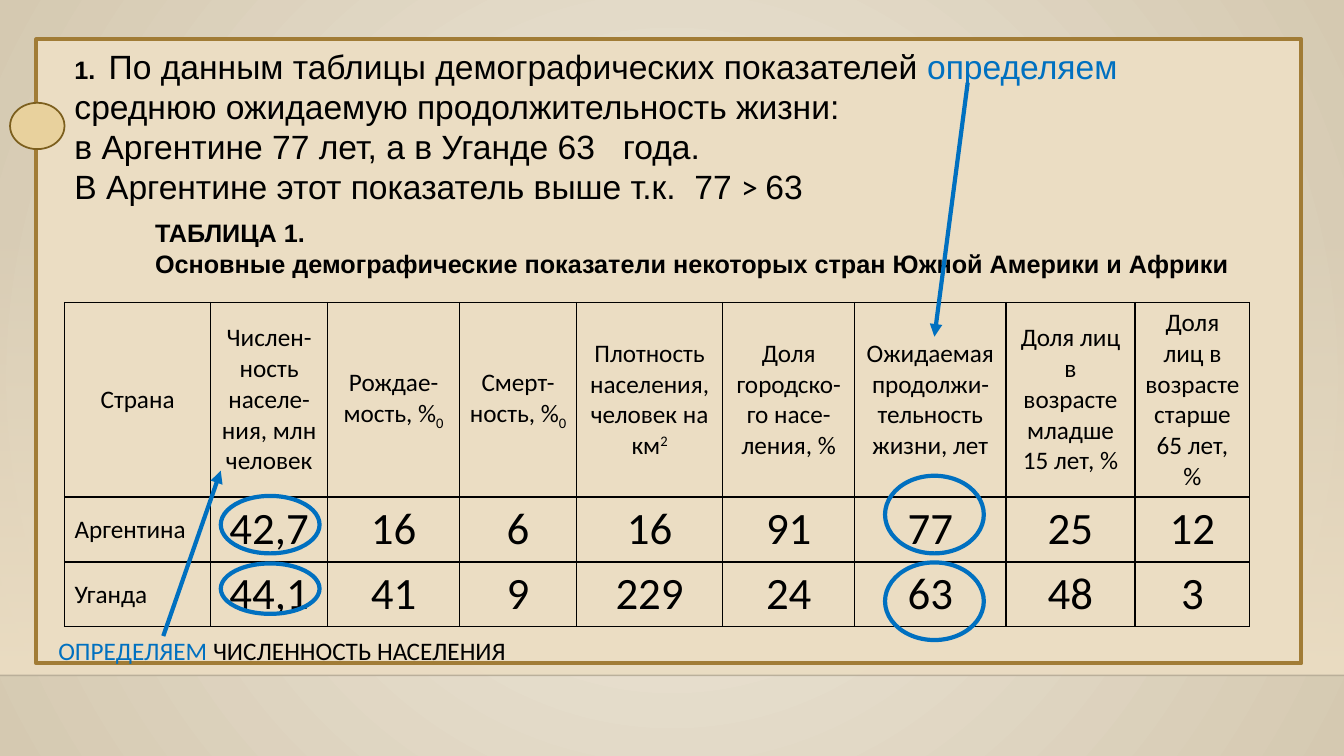
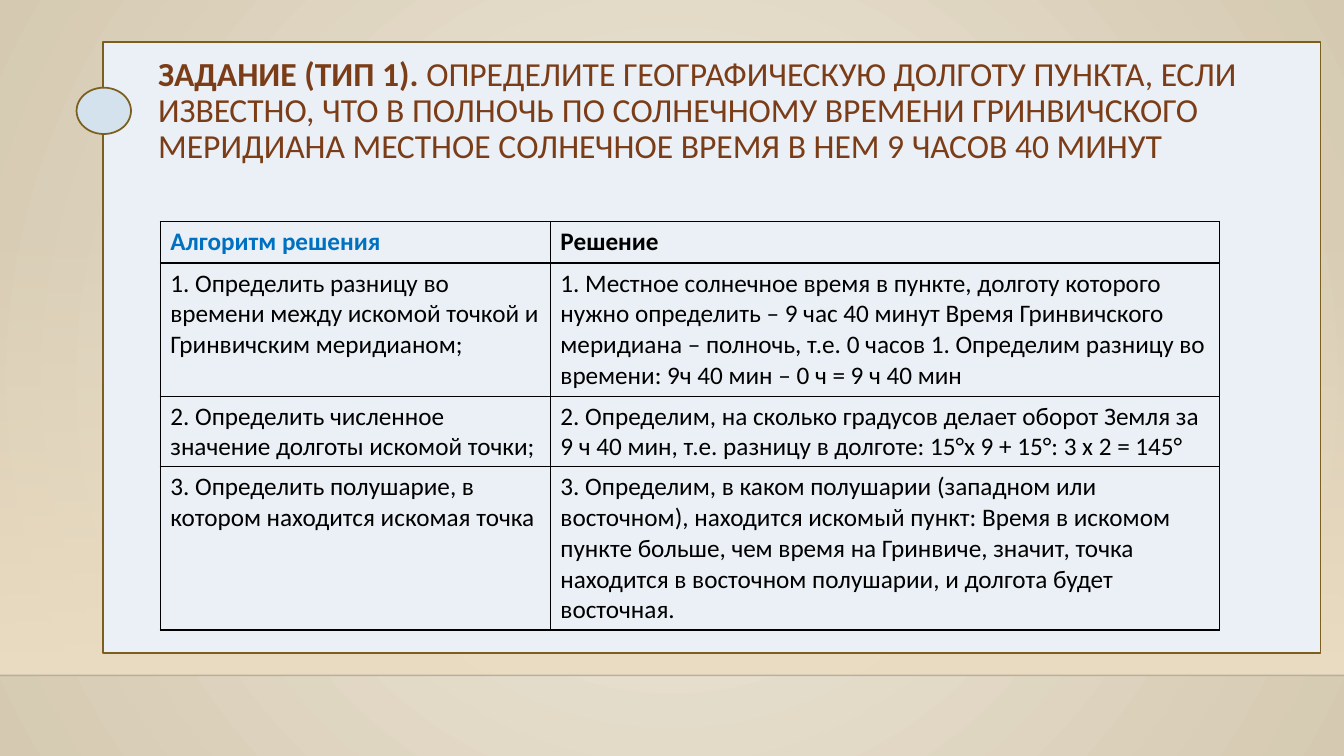
from dataclasses import dataclass
from itertools import accumulate

from lxml import etree
from pptx import Presentation
from pptx.dml.color import RGBColor
from pptx.enum.shapes import MSO_CONNECTOR, MSO_SHAPE
from pptx.enum.text import MSO_ANCHOR, PP_ALIGN
from pptx.oxml import parse_xml
from pptx.oxml.ns import nsdecls, qn
from pptx.util import Inches, Pt

RECT, OVAL = MSO_SHAPE.RECTANGLE, MSO_SHAPE.OVAL
STRAIGHT = MSO_CONNECTOR.STRAIGHT
TOP, MIDDLE = MSO_ANCHOR.TOP, MSO_ANCHOR.MIDDLE
LEFT, CENTER = PP_ALIGN.LEFT, PP_ALIGN.CENTER

GRID_COLS, GRID_ROWS = 133.33, 75  # grid squares of a tenth of an inch
FLOOR_ROW = 67
COLORS = {
    "glow": "F0EADD", "edge": "D5C9B1", "sand": "EBDDC3", "floor": "000001",
    "frame": "A17C36", "outline": "7C5F1E", "gold": "E8D19D",
    "ice": "EAF0F6", "sky": "D4E2ED",
    "text": "000000", "accent": "0070C0", "title": "7B3D17",
}
BODY = {"size": 18, "font": "Calibri", "color": "text"}
ARIAL = {**BODY, "font": "Arial"}
ARIAL_BOLD = {**ARIAL, "bold": True}
LEAD = {**ARIAL, "size": 24}
HEADLINE = {**BODY, "size": 24, "color": "title"}
BREAK = "\n"


def grid(squares):
    return Inches(squares / 10)


def rgb(name):
    return RGBColor.from_string(COLORS[name])


@dataclass
class Box:
    left: float
    top: float
    width: float
    height: float

    def inside(self, left, top, width, height):
        """A box placed from this box's top left corner."""
        return Box(self.left + left, self.top + top, width, height)

    def point(self, x, y):
        return self.left + x, self.top + y

    def lengths(self):
        return [grid(v) for v in (self.left, self.top, self.width, self.height)]


def set_gradient(root, stops, direction):
    """Replace the first solid fill under root; stops are (percent, color, alpha)."""
    marks = "".join(
        f'<a:gs pos="{at * 1000}"><a:srgbClr val="{COLORS[color]}">'
        f'<a:alpha val="{alpha * 1000}"/></a:srgbClr></a:gs>'
        for at, color, alpha in stops)
    solid = root.find(".//" + qn("a:solidFill"))
    solid.getparent().replace(solid, parse_xml(
        f'<a:gradFill {nsdecls("a")} rotWithShape="1"><a:gsLst>{marks}</a:gsLst>'
        f'{direction}</a:gradFill>'))


def add_runs(paragraph, runs, align=LEFT):
    paragraph.alignment = align
    for text, style in runs:
        if text == BREAK:
            paragraph.add_line_break()
            continue
        run = paragraph.add_run()
        run.text = text
        run.font.size = Pt(style["size"])
        run.font.name = style["font"]
        run.font.bold = style.get("bold", False)
        run.font.color.rgb = rgb(style["color"])
        if "baseline" in style:
            run._r.get_or_add_rPr().set("baseline", str(style["baseline"] * 1000))


def add_text(slide, box, paragraphs, anchor=TOP, wrap=True, spacing=None, tabs=()):
    frame = slide.shapes.add_textbox(*box.lengths()).text_frame
    frame.word_wrap = wrap
    frame.vertical_anchor = anchor
    for number, runs in enumerate(paragraphs):
        paragraph = frame.add_paragraph() if number else frame.paragraphs[0]
        if spacing:
            paragraph.line_spacing = spacing
        if tabs:
            stops = etree.SubElement(paragraph._p.get_or_add_pPr(), qn("a:tabLst"))
            for stop in tabs:
                etree.SubElement(stops, qn("a:tab"), pos=str(grid(stop)), algn="l")
        add_runs(paragraph, runs)


def add_outlined(slide, kind, box, fill=None, line=None, width=1.25):
    shape = slide.shapes.add_shape(kind, *box.lengths())
    shape.shadow.inherit = False
    if fill:
        shape.fill.solid()
        shape.fill.fore_color.rgb = rgb(fill)
    else:
        shape.fill.background()
    if line:
        shape.line.color.rgb = rgb(line)
        shape.line.width = Pt(width)
    else:
        shape.line.fill.background()
    return shape


def add_line(slide, start, end, color, width):
    line = slide.shapes.add_connector(STRAIGHT, *map(grid, (*start, *end)))
    line.line.color.rgb = rgb(color)
    line.line.width = Pt(width)
    etree.SubElement(line._element.spPr, qn("a:effectLst"))
    return line


def add_arrow(slide, start, end):
    arrow = add_line(slide, start, end, "accent", 3)
    etree.SubElement(arrow.line._get_or_add_ln(), qn("a:tailEnd"), type="triangle")


def border_cell(cell):
    properties = cell._tc.get_or_add_tcPr()
    for position, side in enumerate(("lnL", "lnR", "lnT", "lnB")):
        properties.insert(position, parse_xml(
            f'<a:{side} {nsdecls("a")} w="{Pt(1)}"><a:solidFill>'
            f'<a:srgbClr val="{COLORS["text"]}"/></a:solidFill></a:{side}>'))


def add_grid_table(slide, box, columns, heights, rows, anchor, align):
    """rows hold lists of runs; align(row, column) gives a cell's alignment."""
    table = slide.shapes.add_table(len(rows), len(columns), *box.lengths()).table
    table.first_row = table.horz_banding = False
    for column, width in zip(table.columns, columns):
        column.width = grid(width)
    for row, height in zip(table.rows, heights):
        row.height = grid(height)
    for r, row in enumerate(rows):
        for c, runs in enumerate(row):
            cell = table.cell(r, c)
            cell.fill.background()
            cell.vertical_anchor = anchor
            border_cell(cell)
            add_runs(cell.text_frame.paragraphs[0], runs, align(r, c))


def set_background(master):
    master.background.fill.solid()
    set_gradient(
        master.element, [(0, "glow", 100), (100, "edge", 100)],
        '<a:path path="circle"><a:fillToRect l="50000" t="50000" r="50000" b="50000"/></a:path>')


def new_slide(prs):
    """A blank slide with the shaded wall and the floor line."""
    slide = prs.slides.add_slide(prs.slide_layouts[6])
    wall_top = 22.1
    wall = add_outlined(
        slide, RECT, Box(0, wall_top, GRID_COLS, FLOOR_ROW - wall_top), "sand")
    set_gradient(wall._element.spPr, [(0, "sand", 0), (100, "sand", 100)],
                 '<a:lin ang="5400000" scaled="0"/>')
    floor = add_line(slide, (0, FLOOR_ROW), (GRID_COLS, FLOOR_ROW), "floor", 1)
    tint = floor._element.spPr.find(".//" + qn("a:srgbClr"))
    etree.SubElement(tint, qn("a:alpha"), val="20000")
    return slide


def add_panel(slide, panel, fill, line, width, knob_top, knob_fill):
    add_outlined(slide, RECT, panel, fill, line, width)
    add_outlined(slide, OVAL, panel.inside(-2.6, knob_top, 5.4, 4.6), knob_fill, "outline")


def demographic_rows():
    figure = {**BODY, "size": 32}
    lowered, raised = {**BODY, "baseline": -25}, {**BODY, "baseline": 30}
    header = [
        [("Страна", BODY)],
        [("Числен-ность населе-ния, млн человек", BODY)],
        [("Рождае-мость, %", BODY), ("0", lowered)],
        [("Смерт-ность, %", BODY), ("0", lowered)],
        [("Плотность населения, человек на км", BODY), ("2", raised)],
        [("Доля городско-го насе-ления, %", BODY)],
        [("Ожидаемая продолжи-тельность жизни, лет", BODY)],
        [("Доля лиц в возрасте младше 15 лет, %", BODY)],
        [("Доля лиц в возрасте старше 65 лет, %", BODY)],
    ]
    countries = [
        ("Аргентина", "42,7", "16", "6", "16", "91", "77", "25", "12"),
        ("Уганда", "44,1", "41", "9", "229", "24", "63", "48", "3"),
    ]
    return [header] + [
        [[(name, BODY)]] + [[(value, figure)] for value in values]
        for name, *values in countries]


def demographics_slide(prs, panel):
    slide = new_slide(prs)
    add_panel(slide, panel, "sand", "frame", 3, 6.3, "gold")

    columns = [14.5, 11.6, 13.1, 11.6, 14.5, 13.1, 15, 12.8, 11.4]
    heights = [19.3, 6.4, 6.4]
    table = panel.inside(2.8, 26.1, sum(columns), sum(heights))
    add_grid_table(slide, table, columns, heights, demographic_rows(), MIDDLE,
                   lambda r, c: LEFT if r and not c else CENTER)

    add_text(slide, panel.inside(2.8, 0, 117.8, 17.2), [[
        ("1.\t", ARIAL_BOLD),
        ("По данным таблицы демографических показателей ", LEAD),
        ("определяем ", {**LEAD, "color": "accent"}),
        ("среднюю ожидаемую продолжительность жизни:", LEAD), (BREAK, LEAD),
        ("в Аргентине 77 лет, а в Уганде 63\tгода.", LEAD), (BREAK, LEAD),
        ("В Аргентине этот показатель выше т.к.\t77 ", LEAD),
        ("> ", {**LEAD, "font": "Calibri"}), ("63", LEAD),
    ]], MIDDLE, tabs=(3.4, 54.4, 61.5))
    add_text(slide, panel.inside(10.8, 17.2, 110.5, 7.1), [
        [("ТАБЛИЦА 1.", ARIAL_BOLD)],
        [("Основные демографические показатели некоторых стран "
          "Южной Америки и Африки", ARIAL_BOLD)],
    ])
    add_text(slide, panel.inside(1.2, 58.6, 47.1, 4), [[
        ("ОПРЕДЕЛЯЕМ ", {**BODY, "color": "accent"}),
        ("ЧИСЛЕННОСТЬ НАСЕЛЕНИЯ", BODY),
    ]], wrap=False)

    column_starts = [0, *accumulate(columns)]
    population, life_span = column_starts[1], column_starts[6]
    rings = [(population + 1, 19.2, 5.7), (population + 1, 25.9, 5),
             (life_span + 3, 17.2, 7.7), (life_span + 3, 25.8, 7.7)]
    for left, top, height in rings:
        add_outlined(slide, OVAL, table.inside(left, top, 9.8, height),
                     line="accent", width=3)
    add_arrow(slide, panel.point(92.4, 4.3), table.point(life_span + 7.9, 3.4))
    add_arrow(slide, panel.point(12.6, 59.2), table.point(population + 1, 16.7))


def longitude_slide(prs, panel):
    slide = new_slide(prs)
    add_panel(slide, panel, "ice", "outline", 1.25, 4.5, "sky")
    add_text(slide, panel.inside(4.5, 1, 113.1, 11.5), [[
        ("ЗАДАНИЕ (ТИП 1).", {**HEADLINE, "bold": True}),
        (" ОПРЕДЕЛИТЕ ГЕОГРАФИЧЕСКУЮ ДОЛГОТУ ПУНКТА, ЕСЛИ ИЗВЕСТНО, ЧТО В ПОЛНОЧЬ "
         "ПО СОЛНЕЧНОМУ ВРЕМЕНИ ГРИНВИЧСКОГО МЕРИДИАНА МЕСТНОЕ СОЛНЕЧНОЕ ВРЕМЯ "
         "В НЕМ 9 ЧАСОВ 40 МИНУТ", HEADLINE),
    ]], spacing=0.9)

    heading = {**BODY, "bold": True}
    steps = [
        ("1. Определить разницу во времени между искомой точкой и Гринвичским меридианом;",
         "1. Местное солнечное время в пункте, долготу которого нужно определить – "
         "9 час 40 минут Время Гринвичского меридиана – полночь, т.е. 0 часов "
         "1. Определим разницу во времени: 9ч 40 мин – 0 ч = 9 ч 40 мин"),
        ("2. Определить численное значение долготы искомой точки;",
         "2. Определим, на сколько градусов делает оборот Земля за 9 ч 40 мин, "
         "т.е. разницу в долготе: 15°х 9 + 15°: 3 х 2 = 145°"),
        ("3. Определить полушарие, в котором находится искомая точка",
         "3. Определим, в каком полушарии (западном или восточном), находится искомый "
         "пункт: Время в искомом пункте больше, чем время на Гринвиче, значит, точка "
         "находится в восточном полушарии, и долгота будет восточная."),
    ]
    rows = [[[("Алгоритм решения", {**heading, "color": "accent"})],
             [("Решение", heading)]]]
    rows += [[[(text, BODY)] for text in step] for step in steps]
    columns, heights = [38.7, 66.4], [4.1, 13.2, 7, 16.2]
    add_grid_table(slide, panel.inside(5.7, 17.8, sum(columns), sum(heights)),
                   columns, heights, rows, TOP, lambda r, c: LEFT)


def main():
    prs = Presentation()
    prs.slide_width, prs.slide_height = grid(GRID_COLS), grid(GRID_ROWS)
    set_background(prs.slide_master)
    demographics_slide(prs, Box(3.6, 3.9, 125.5, 61.9))
    longitude_slide(prs, Box(10.2, 4.2, 120.8, 60.6))
    prs.save("out.pptx")


if __name__ == "__main__":
    main()
